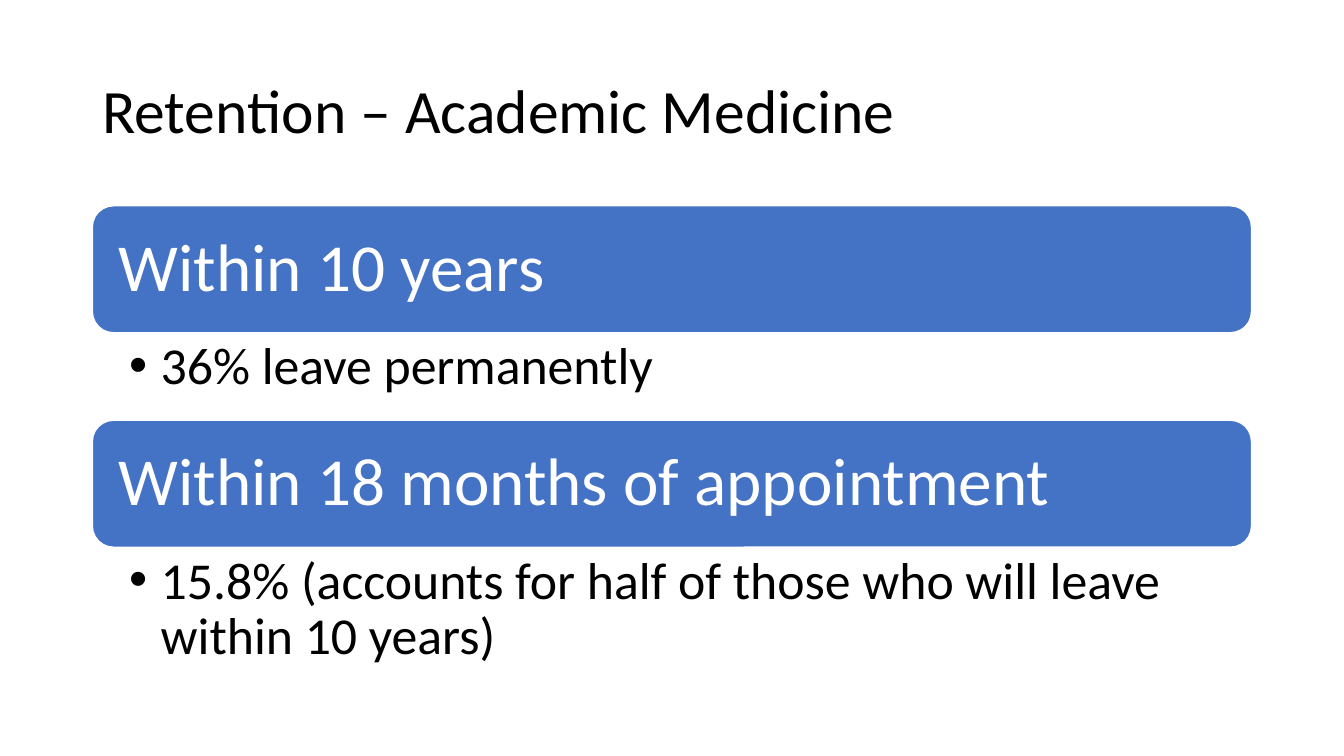
import pptx
import pptx.util
import pptx.dml.color
import pptx.enum.shapes
import pptx.enum.text
import pptx.oxml.ns
import lxml.etree

Pt = pptx.util.Pt
RGB = pptx.dml.color.RGBColor
MID = pptx.enum.text.MSO_ANCHOR.MIDDLE
TOP = pptx.enum.text.MSO_ANCHOR.TOP
BLUE = RGB(0x44, 0x72, 0xC4)
WHITE = RGB(0xFF, 0xFF, 0xFF)
BLACK = RGB(0x00, 0x00, 0x00)
LEFT, WIDE = 66, 828


class Deck:
    font = "Calibri"

    def __init__(self):
        self.show = pptx.Presentation()
        self.show.slide_width = Pt(960)
        self.show.slide_height = Pt(540)
        self.slide = self.show.slides.add_slide(self.show.slide_layouts[6])

    def label(self, shape, text, size, color, anchor, side, edge):
        frame = shape.text_frame
        frame.text = text
        frame.word_wrap = True
        frame.vertical_anchor = anchor
        frame.margin_left = frame.margin_right = Pt(side)
        frame.margin_top = frame.margin_bottom = Pt(edge)
        para = frame.paragraphs[0]
        para.alignment = pptx.enum.text.PP_ALIGN.LEFT
        para.line_spacing = 0.9
        font = para.runs[0].font
        font.name = self.font
        font.size = Pt(size)
        font.color.rgb = color
        return para

    def box(self, top, high):
        return self.slide.shapes.add_textbox(Pt(LEFT), Pt(top), Pt(WIDE), Pt(high))

    def title(self, text, top, high):
        self.label(self.box(top, high), text, 44, BLACK, MID, 7.2, 3.6)

    def bar(self, text, top, high):
        kind = pptx.enum.shapes.MSO_SHAPE.ROUNDED_RECTANGLE
        shape = self.slide.shapes.add_shape(kind, Pt(LEFT), Pt(top), Pt(WIDE), Pt(high))
        shape.shadow.inherit = False
        shape.fill.solid()
        shape.fill.fore_color.rgb = BLUE
        shape.line.color.rgb = WHITE
        shape.line.width = Pt(1)
        self.label(shape, text, 48, WHITE, MID, 14.4, 14.4)

    def point(self, text, top, high):
        para = self.label(self.box(top, high), text, 37, BLACK, TOP, 26.3, 5)
        para.level = 1
        props = para._p.get_or_add_pPr()
        props.set("marL", str(Pt(22.5)))
        props.set("indent", str(Pt(-22.5)))
        for tag, key, value in (
            ("a:buFont", "typeface", "Arial"),
            ("a:buChar", "char", "•"),
        ):
            lxml.etree.SubElement(props, pptx.oxml.ns.qn(tag)).set(key, value)


def main():
    deck = Deck()
    deck.title("Retention – Academic Medicine", 28.75, 104.4)
    tall = 90.7
    top = 147
    for head, note, high in (
        ("Within 10 years", "36% leave permanently", 62.5),
        (
            "Within 18 months of appointment",
            "15.8% (accounts for half of those who will leave within 10 years)",
            92.2,
        ),
    ):
        deck.bar(head, top, tall)
        deck.point(note, top + tall, high)
        top += tall + high
    deck.show.save("out.pptx")


if __name__ == "__main__":
    main()
